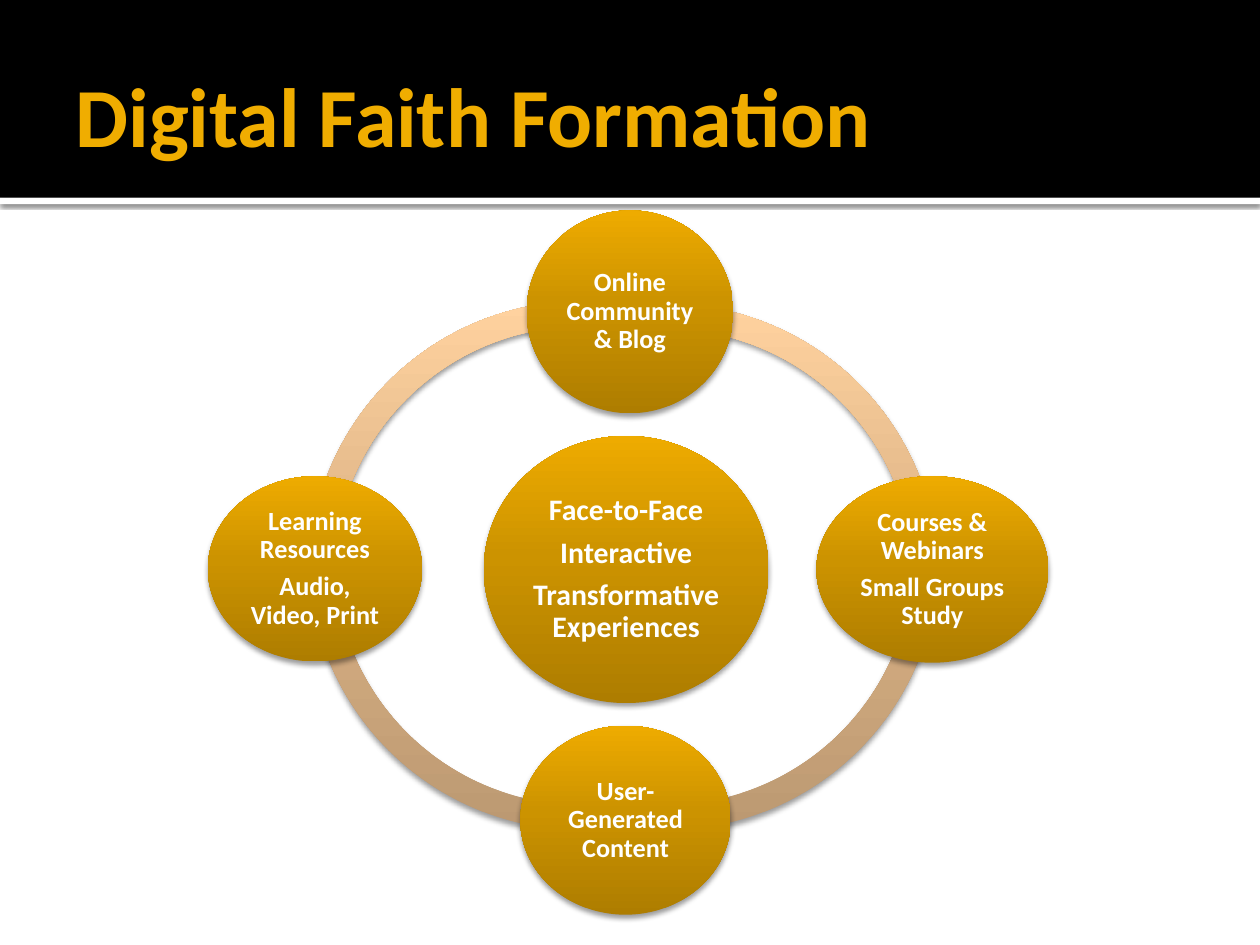
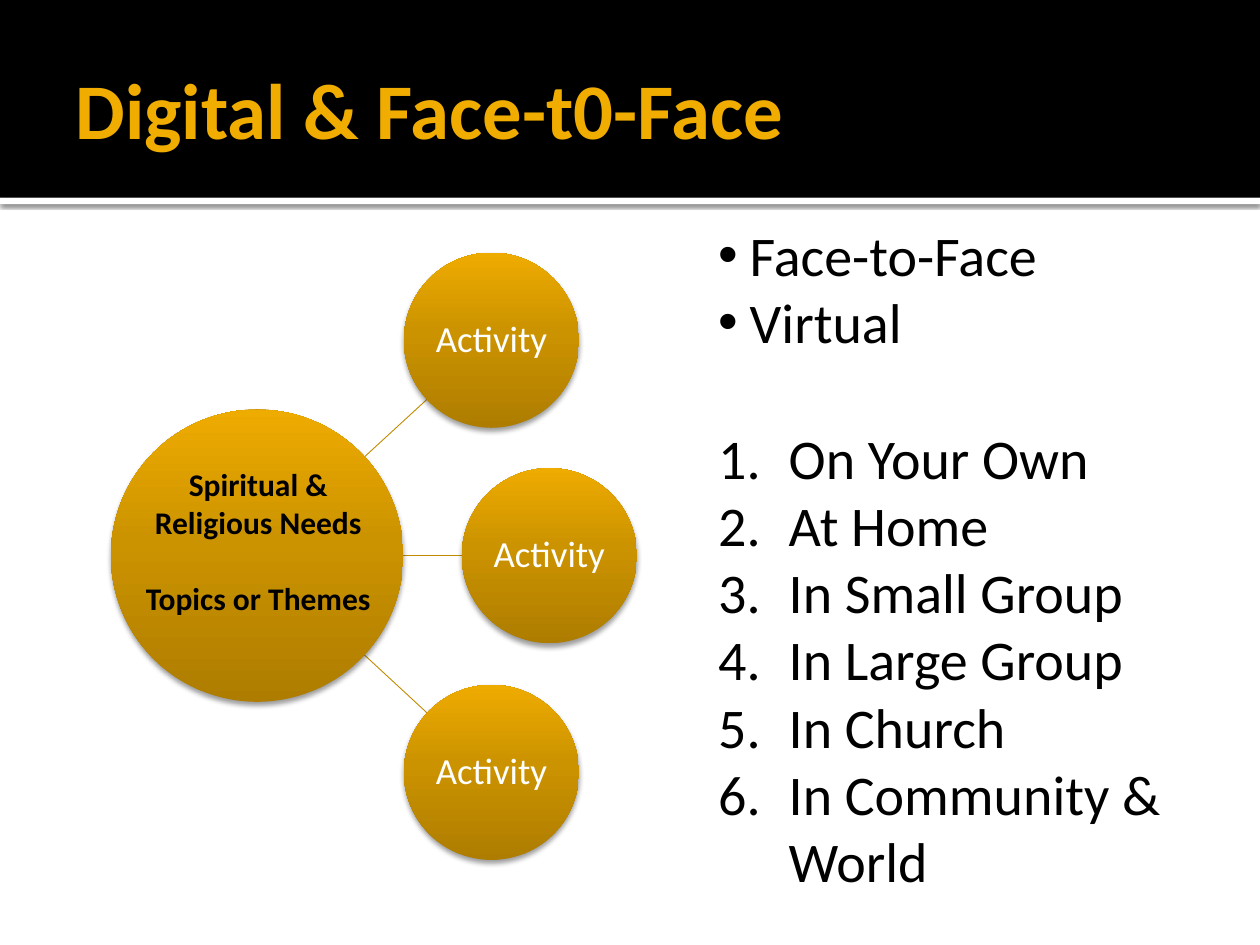
import math

from lxml import etree
from pptx import Presentation
from pptx import util as u
from pptx.dml.color import RGBColor
from pptx.enum import shapes, text
from pptx.oxml import parse_xml
from pptx.oxml.ns import nsdecls, qn

FONT = "Calibri"
BLACK = RGBColor(0x00, 0x00, 0x00)
WHITE = RGBColor(0xFF, 0xFF, 0xFF)
AMBER = RGBColor(0xF0, 0xAD, 0x00)
LINE_AMBER = RGBColor(0xC0, 0x8B, 0x00)

# Gradient stops (percent, colour), from the bottom upwards
GOLD = [(0, RGBColor(0xAE, 0x7D, 0x00)), (55, RGBColor(0xCC, 0x93, 0x00)),
        (100, RGBColor(0xEE, 0xAB, 0x00))]
PEACH = [(0, RGBColor(0xBC, 0x99, 0x72)), (55, RGBColor(0xDD, 0xB4, 0x86)),
         (100, RGBColor(0xFF, 0xD2, 0x9F))]

# Shadows: opacity percent, blur and distance in points
BAND_SHADOW = (60, 2.5, 0.8)
BUBBLE_SHADOW = (38, 3.1, 2)

# Bands: left, top, width, height, colour, shadow
BANDS = [
    (0, 1.57, 10, 0.05, WHITE, BAND_SHADOW),
    (0, 0, 10, 1.57, BLACK, None),
]

# Ring arcs: left, top, start and end angle in degrees, clockwise from the right
RING_SIZE = 4.34
RING_THICKNESS = 0.046
RING_ARCS = [
    (2.45, 2.39, 181.2, 280.22),
    (2.45, 2.25, 80.69, 177.44),
    (3.11, 2.25, 2.67, 98.64),
    (3.11, 2.41, 262.36, 358.41),
]

# Ring bubbles: left, top, width, height, text size, paragraphs
RING_BUBBLES = [
    (3.84, 3.46, 2.26, 2.12, 17,
     ["Face-to-Face", "Interactive", "Transformative Experiences"]),
    (4.18, 1.67, 1.64, 1.61, 15, ["Online Community & Blog"]),
    (6.48, 3.78, 1.84, 1.48, 15, ["Courses & Webinars", "Small Groups Study"]),
    (4.13, 5.76, 1.67, 1.5, 15, ["User-Generated Content"]),
    (1.65, 3.78, 1.7, 1.47, 15, ["Learning Resources", "Audio, Video, Print"]),
]

# Hub and activities: centre x, centre y
HUB_CENTRE, HUB_RADIUS = (2.04, 4.41), 1.16
ACTIVITY_CENTRES = [(3.9, 2.7), (4.36, 4.41), (3.9, 6.13)]
ACTIVITY_RADIUS = 0.695
HUB_TEXT = ["Spiritual & Religious Needs", "Topics or Themes"]
SETTINGS = ["Face-to-Face", "Virtual"]
GROUPINGS = ["On Your Own", "At Home", "In Small Group", "In Large Group",
             "In Church", "In Community & World"]


def inches(*lengths):
    return [u.Inches(length) for length in lengths]


def add_shadow(shape, opacity, blur, distance):
    effects = shape.element.spPr.find(qn("a:effectLst"))
    effects.append(parse_xml(
        f'<a:outerShdw {nsdecls("a")} blurRad="{u.Pt(blur)}" dist="{u.Pt(distance)}" '
        f'dir="5400000" rotWithShape="0"><a:srgbClr val="{BLACK}">'
        f'<a:alpha val="{opacity * 1000}"/></a:srgbClr></a:outerShdw>'))


def add_plain_shape(page, kind, *place):
    shape = page.shapes.add_shape(kind, *inches(*place))
    shape.shadow.inherit = False
    shape.line.fill.background()
    return shape


def add_glossy_shape(page, kind, place, stops):
    """Add a shape with an upward gradient and a soft shadow."""
    shape = add_plain_shape(page, kind, *place)
    shape.fill.background()
    properties = shape.element.spPr
    stop_xml = "".join(f'<a:gs pos="{percent * 1000}"><a:srgbClr val="{colour}"/></a:gs>'
                       for percent, colour in stops)
    properties.replace(properties.find(qn("a:noFill")), parse_xml(
        f'<a:gradFill {nsdecls("a")} rotWithShape="1"><a:gsLst>{stop_xml}</a:gsLst>'
        '<a:lin ang="16200000" scaled="0"/></a:gradFill>'))
    add_shadow(shape, *BUBBLE_SHADOW)
    return shape


def write(frame, lines, size, colour, bold=False, align=None):
    frame.text = "\n".join(lines)
    frame.word_wrap = True
    frame.auto_size = text.MSO_AUTO_SIZE.NONE
    for para in frame.paragraphs:
        para.alignment = align
        for span in para.runs:
            span.font.name = FONT
            span.font.size = u.Pt(size)
            span.font.bold = bold
            span.font.color.rgb = colour


def add_bubble(page, place, lines, size, bold, inset):
    bubble = add_glossy_shape(page, shapes.MSO_SHAPE.OVAL, place, GOLD)
    frame = bubble.text_frame
    frame.margin_left = frame.margin_right = u.Inches(inset)
    frame.margin_top = frame.margin_bottom = u.Inches(inset)
    frame.vertical_anchor = text.MSO_ANCHOR.MIDDLE
    write(frame, lines, size, WHITE, bold, text.PP_ALIGN.CENTER)
    for para in frame.paragraphs:
        para.line_spacing = 0.9
        para.space_after = u.Pt(round(0.35 * size))


def circle_place(centre, radius):
    return centre[0] - radius, centre[1] - radius, 2 * radius, 2 * radius


def add_spoke(page, centre):
    """Join the edge of the hub to the edge of an activity circle."""
    angle = math.atan2(centre[1] - HUB_CENTRE[1], centre[0] - HUB_CENTRE[0])
    across, down = math.cos(angle), math.sin(angle)
    spoke = page.shapes.add_connector(shapes.MSO_CONNECTOR.STRAIGHT, *inches(
        HUB_CENTRE[0] + HUB_RADIUS * across, HUB_CENTRE[1] + HUB_RADIUS * down,
        centre[0] - ACTIVITY_RADIUS * across, centre[1] - ACTIVITY_RADIUS * down))
    spoke.line.color.rgb = LINE_AMBER
    spoke.line.width = u.Pt(0.5)
    etree.SubElement(spoke.element.spPr, qn("a:effectLst"))


def move(shape, *place):
    shape.left, shape.top, shape.width, shape.height = inches(*place)


def add_master_bands(page):
    """Build the bands and move them behind the master's placeholders."""
    master = page.slide_layout.slide_master
    first = master.shapes[0].element
    for number, (*place, colour, shadow) in enumerate(BANDS, 101):
        band = add_plain_shape(page, shapes.MSO_SHAPE.RECTANGLE, *place)
        band.fill.solid()
        band.fill.fore_color.rgb = colour
        if shadow:
            add_shadow(band, *shadow)
        band.element.nvSpPr.cNvPr.set("id", str(number))
        first.addprevious(band.element)


def add_page(deck, layout, title, top, height, size):
    page = deck.slides.add_slide(deck.slide_layouts.get_by_name(layout))
    heading = page.shapes.title
    move(heading, 0.5, top, 9, height)
    frame = heading.text_frame
    frame.margin_left = u.Inches(0.1)
    frame.margin_right = frame.margin_top = frame.margin_bottom = u.Inches(0.05)
    frame.vertical_anchor = text.MSO_ANCHOR.MIDDLE
    write(frame, [title], size, AMBER, True, text.PP_ALIGN.LEFT)
    return page


def set_bullet(para, indent, tag, **attributes):
    properties = para._p.get_or_add_pPr()
    properties.set("marL", str(u.Inches(indent)))
    properties.set("indent", str(-u.Inches(indent)))
    etree.SubElement(properties, qn(tag), **attributes)


def fill_ring_page(page):
    for left, top, start, end in RING_ARCS:
        arc = add_glossy_shape(page, shapes.MSO_SHAPE.BLOCK_ARC,
                               (left, top, RING_SIZE, RING_SIZE), PEACH)
        # Angles are stored in 60000ths of a degree, adjustments in 100000ths
        arc.adjustments[0] = start * 0.6
        arc.adjustments[1] = end * 0.6
        arc.adjustments[2] = RING_THICKNESS
    for *place, size, lines in RING_BUBBLES:
        add_bubble(page, place, lines, size, True, 0.02)


def fill_hub_page(page):
    for centre in ACTIVITY_CENTRES:
        add_spoke(page, centre)
    add_glossy_shape(page, shapes.MSO_SHAPE.OVAL,
                     circle_place(HUB_CENTRE, HUB_RADIUS), GOLD)
    for centre in ACTIVITY_CENTRES:
        add_bubble(page, circle_place(centre, ACTIVITY_RADIUS), ["Activity"],
                   21, False, 0.01)

    body = page.placeholders[1]
    move(body, 5.6, 1.7, 4.07, 5.49)
    write(body.text_frame, SETTINGS + GROUPINGS, 32, BLACK)
    for index, para in enumerate(body.text_frame.paragraphs):
        para.space_before = u.Pt(39 if index == len(SETTINGS) else 0)
        if index < len(SETTINGS):
            set_bullet(para, 0.25, "a:buChar", char="•")
        else:
            set_bullet(para, 0.56, "a:buAutoNum", type="arabicPeriod")

    box = page.shapes.add_textbox(*inches(1.05, 3.64, 2, 1.62))
    write(box.text_frame, HUB_TEXT, 18, BLACK, True, text.PP_ALIGN.CENTER)
    box.text_frame.paragraphs[1].space_before = u.Pt(22)


def main():
    deck = Presentation()
    deck.slide_width, deck.slide_height = inches(10, 7.5)
    ring_page = add_page(deck, "Title Only", "Digital Faith Formation", 0.3, 1.21, 48)
    add_master_bands(ring_page)
    fill_ring_page(ring_page)
    fill_hub_page(add_page(deck, "Title and Content", "Digital & Face-t0-Face",
                           0.17, 1.37, 45))
    deck.save("out.pptx")


if __name__ == "__main__":
    main()
